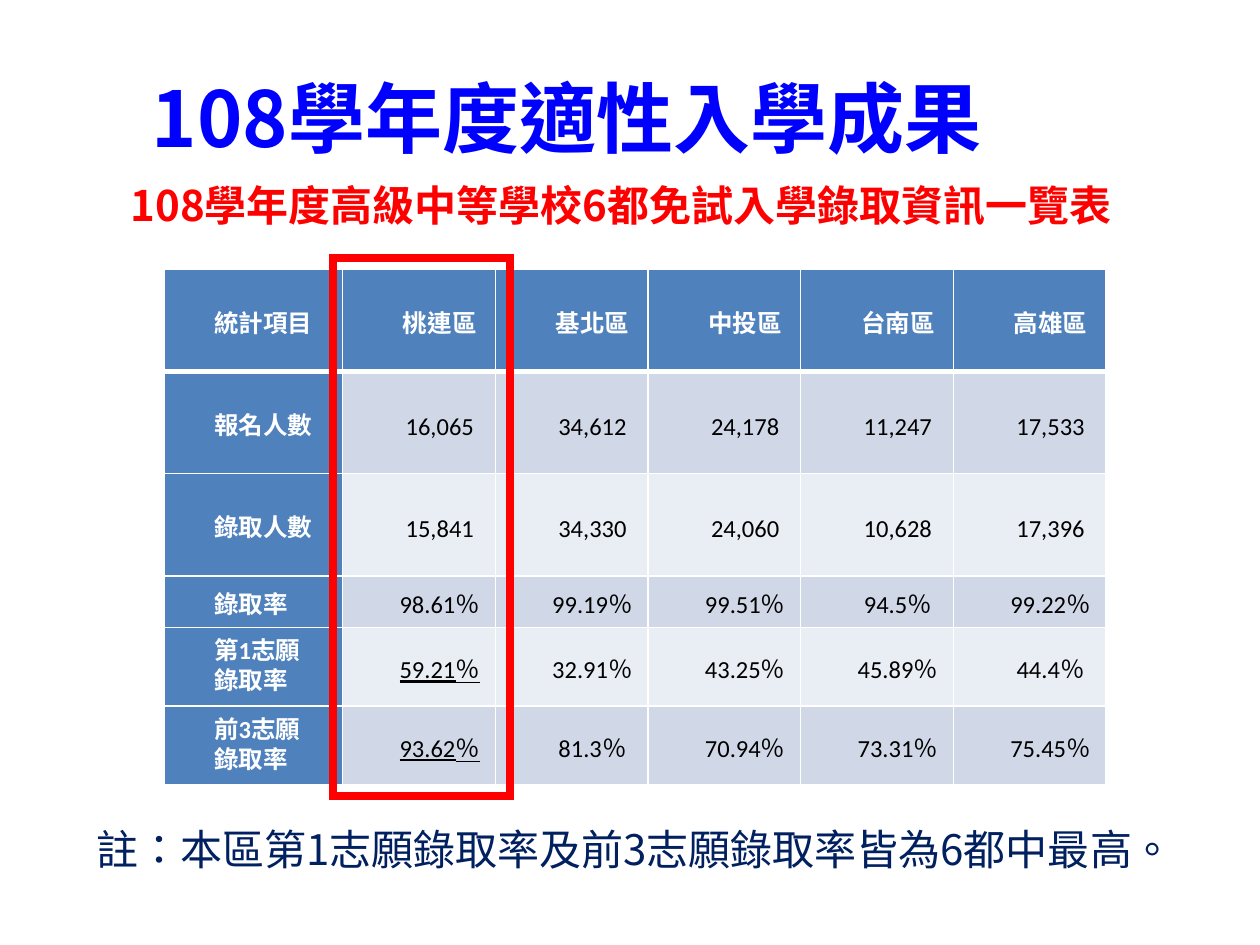
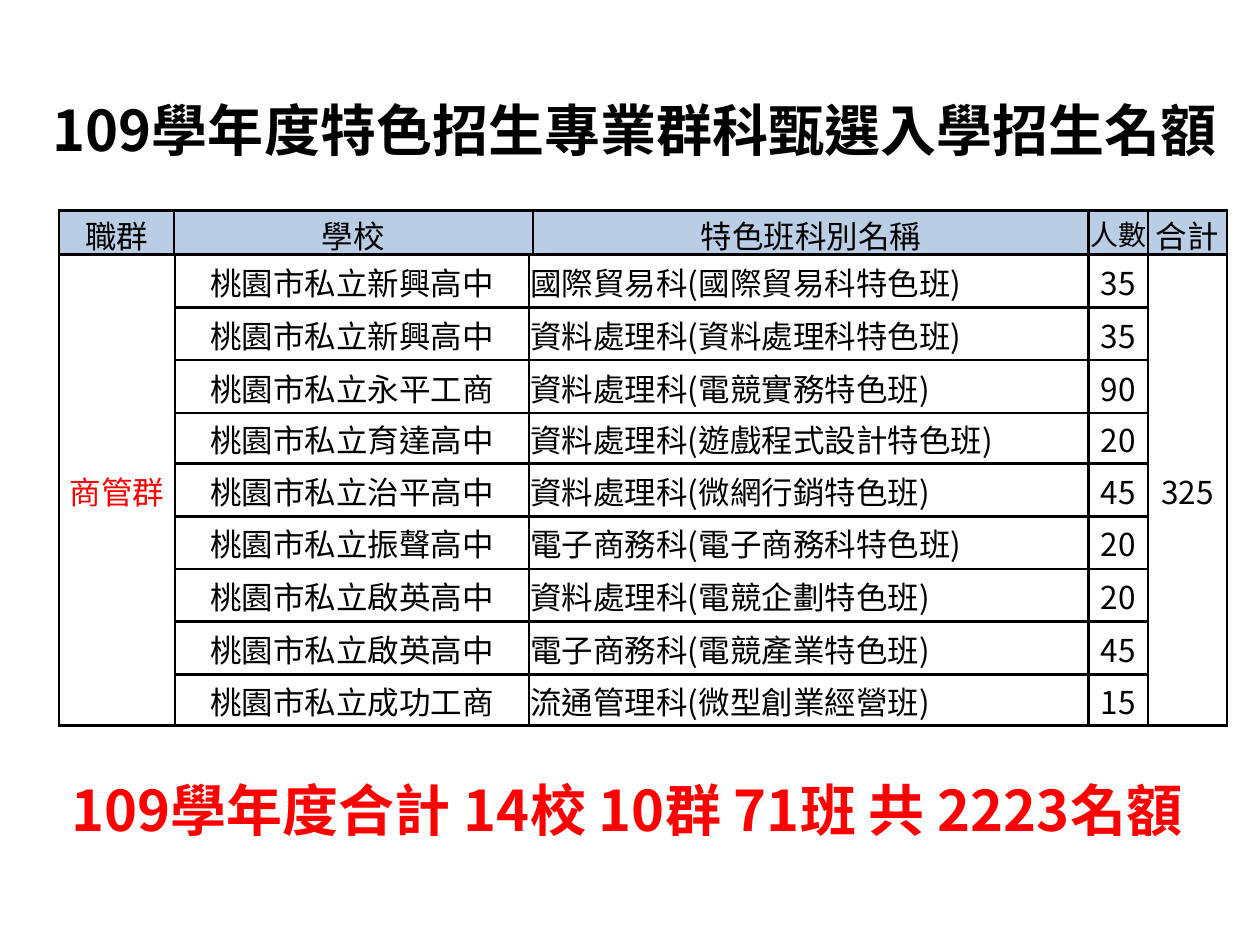
from lxml.etree import SubElement
from pptx import Presentation
from pptx.dml.color import RGBColor
from pptx.enum.lang import MSO_LANGUAGE_ID as Language
from pptx.enum.shapes import MSO_SHAPE as Shape
from pptx.enum.text import MSO_ANCHOR as Anchor, MSO_AUTO_SIZE as AutoSize, PP_ALIGN as Align
from pptx.oxml.ns import qn
from pptx.util import Inches, Pt

COLORS = {
    "white": "FFFFFF", "black": "000000", "blue": "0000FF", "red": "FF0000",
    "navy": "002060", "header": "4F81BD", "band_dark": "D0D8E8",
    "band_light": "E9EDF4", "pale_blue": "B9CDE5",
}
CJK_FONT = "Noto Sans CJK SC"
TABLE_FONT = "Calibri"
GRID_COLUMNS, GRID_ROWS = 100, 75


def color(name):
    return RGBColor.from_string(COLORS[name])


class SlideBuilder:
    """Holds the deck, the current page and the shared style."""

    def __init__(self):
        self.deck = Presentation()
        self.deck.slide_width, self.deck.slide_height = Inches(10), Inches(7.5)
        self.page = None

    def new_page(self):
        self.page = self.deck.slides.add_slide(self.deck.slide_layouts[6])

    def across(self, columns):
        return round(self.deck.slide_width * columns / GRID_COLUMNS)

    def down(self, rows):
        return round(self.deck.slide_height * rows / GRID_ROWS)

    def area(self, left, top, width, height):
        return self.across(left), self.down(top), self.across(width), self.down(height)

    def set_text(self, frame, text, size, ink, font=CJK_FONT, bold=False,
                 underline=False, align=Align.LEFT, indent=0, spacing=None):
        frame.text = text
        for para in frame.paragraphs:
            para.alignment = align
            if indent:
                properties = para._p.get_or_add_pPr()
                properties.set("marL", str(self.across(indent)))
                properties.set("indent", "0")
            if spacing:
                para.line_spacing = Pt(spacing)
            for span in para.runs:
                span.font.size, span.font.name = Pt(size), font
                span.font.bold, span.font.underline = bold, underline
                span.font.color.rgb = color(ink)
                span.font.language_id = Language.TRADITIONAL_CHINESE
                SubElement(span._r.rPr, qn("a:ea"), typeface=CJK_FONT)

    def text(self, area, text, size, ink, grow=False, **style):
        box = self.page.shapes.add_textbox(*self.area(*area))
        frame = box.text_frame
        frame.word_wrap = True
        frame.vertical_anchor = Anchor.TOP if grow else Anchor.MIDDLE
        frame.auto_size = AutoSize.SHAPE_TO_FIT_TEXT if grow else AutoSize.NONE
        self.set_text(frame, text, size, ink, **style)

    def outline(self, area, ink, width):
        box = self.page.shapes.add_shape(Shape.RECTANGLE, *self.area(*area))
        box.shadow.inherit = False
        box.fill.background()
        box.line.color.rgb, box.line.width = color(ink), Pt(width)
        SubElement(box.line._get_or_add_ln(), qn("a:miter"), lim="800000")

    def table(self, left, top, widths, heights):
        area = self.area(left, top, sum(widths), sum(heights))
        table = self.page.shapes.add_table(len(heights), len(widths), *area).table
        for column, width in zip(table.columns, widths):
            column.width = self.across(width)
        for row, height in zip(table.rows, heights):
            row.height = self.down(height)
        return table

    def cell(self, cell, text, fill, margins, border, bottom=None, **style):
        """Fill one cell; border is (colour, points), bottom its own points."""
        side, upper = margins
        cell.margin_left = cell.margin_right = self.across(side)
        cell.margin_top, cell.margin_bottom = self.down(upper), 0
        cell.vertical_anchor = Anchor.MIDDLE
        self.set_text(cell.text_frame, text, **style)
        properties = cell._tc.get_or_add_tcPr()
        ink, points = border
        for edge in ("lnL", "lnR", "lnT", "lnB"):
            width = bottom if bottom and edge == "lnB" else points
            line = SubElement(properties, qn(f"a:{edge}"), w=str(Pt(width)))
            solid = SubElement(line, qn("a:solidFill"))
            SubElement(solid, qn("a:srgbClr"), val=COLORS[ink])
        cell.fill.solid()
        cell.fill.fore_color.rgb = color(fill)


ADMISSION_ROWS = [
    ("統計項目", "桃連區", "基北區", "中投區", "台南區", "高雄區"),
    ("報名人數", "16,065", "34,612", "24,178", "11,247", "17,533"),
    ("錄取人數", "15,841", "34,330", "24,060", "10,628", "17,396"),
    ("錄取率", "98.61％", "99.19％", "99.51％", "94.5％", "99.22％"),
    ("第1志願\n錄取率", "59.21％", "32.91％", "43.25％", "45.89％", "44.4％"),
    ("前3志願\n錄取率", "93.62％", "81.3％", "70.94％", "73.31％", "75.45％"),
]
QUOTA_HEADERS = ("職群", "學校", "特色班科別名稱", "人數", "合計")
SCHOOL_PREFIX = "桃園市私立"
QUOTA_ROWS = [
    ("新興高中", "國際貿易科(國際貿易科特色班)", 35),
    ("新興高中", "資料處理科(資料處理科特色班)", 35),
    ("永平工商", "資料處理科(電競實務特色班)", 90),
    ("育達高中", "資料處理科(遊戲程式設計特色班)", 20),
    ("治平高中", "資料處理科(微網行銷特色班)", 45),
    ("振聲高中", "電子商務科(電子商務科特色班)", 20),
    ("啟英高中", "資料處理科(電競企劃特色班)", 20),
    ("啟英高中", "電子商務科(電競產業特色班)", 45),
    ("成功工商", "流通管理科(微型創業經營班)", 15),
]


def admission_page(builder):
    builder.new_page()
    # Title
    builder.text((0, 3, 90, 12.5), "108學年度適性入學成果", 44, "blue",
                 bold=True, align=Align.CENTER)
    # Admission figures by district
    table = builder.table(13, 21.4, [14.2] + [12.12] * 5,
                          [8.1] * 3 + [4.1] + [6.25] * 2)
    for r, values in enumerate(ADMISSION_ROWS):
        for c, value in enumerate(values):
            heading = r == 0 or c == 0
            band = "band_dark" if r % 2 else "band_light"
            builder.cell(
                table.cell(r, c), value, "header" if heading else band,
                margins=(0.7, 0), border=("white", 1), bottom=None if r else 3,
                size=14, ink="white" if heading else "black", font=TABLE_FONT,
                bold=heading, underline=c == 1 and r >= 4,
                align=Align.CENTER if c else Align.LEFT, indent=3.3,
                spacing=17 if "\n" in value else 22)
    # Frame around the home district
    builder.outline((26.4, 20.5, 14.1, 42.7), "red", 4.5)
    # Subtitle and note
    builder.text((4.3, 13, 90, 6.5), "108學年度高級中等學校6都免試入學錄取資訊一覽表",
                 24, "red", bold=True, align=Align.CENTER)
    builder.text((5.4, 64.1, 90, 6.5), "註：本區第1志願錄取率及前3志願錄取率皆為6都中最高。",
                 24, "navy", align=Align.CENTER)


def quota_page(builder):
    builder.new_page()
    style = {"margins": (0.1, 0.1), "border": ("black", 1.5)}
    # Title
    builder.text((3.2, 7.1, 96.9, 6.4), "109學年度特色招生專業群科甄選入學招生名額",
                 32, "black", grow=True, bold=True)
    # Quotas by school, with group and total merged down the sides
    table = builder.table(4.7, 20.2, [9.2, 28.1, 44.4, 4.7, 6.3],
                          [4.2, 4.2, 4.2, 4, 4.2, 4.15, 4.2, 4.2, 4.05])
    last = len(QUOTA_ROWS) - 1
    for side in (0, 4):
        table.cell(0, side).merge(table.cell(last, side))
    total = sum(seats for _, _, seats in QUOTA_ROWS)
    for r, (school, course, seats) in enumerate(QUOTA_ROWS):
        group, group_total = ("", "") if r else ("商管群", str(total))
        values = (group, SCHOOL_PREFIX + school, course, str(seats), group_total)
        for c, value in enumerate(values):
            builder.cell(table.cell(r, c), value, "white", size=18,
                         ink="black" if c else "red",
                         align=Align.LEFT if c == 2 else Align.CENTER, **style)
    # Column headings
    headings = builder.table(4.7, 16.7, [9.1, 28.5, 44.1, 4.7, 6.3], [3.5])
    for c, heading in enumerate(QUOTA_HEADERS):
        builder.cell(headings.cell(0, c), heading, "pale_blue",
                     size=16 if heading == "人數" else 18, ink="black",
                     align=Align.CENTER, **style)
    # Overall total
    builder.text((4.7, 61.1, 95.3, 6.4), "109學年度合計 14校 10群 71班 共 2223名額",
                 32, "red", grow=True, bold=True)


def main():
    builder = SlideBuilder()
    admission_page(builder)
    quota_page(builder)
    builder.deck.save("out.pptx")


if __name__ == "__main__":
    main()
